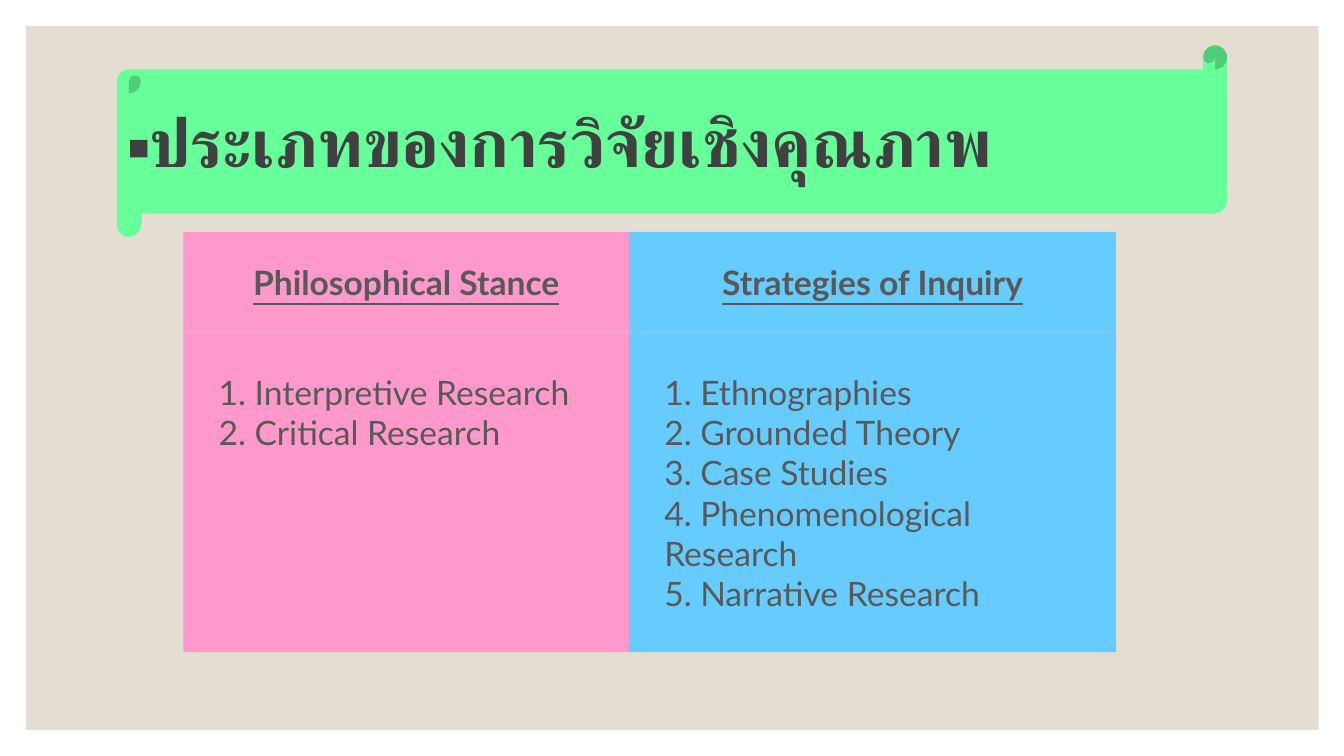
import pptx
import pptx.dml.color
import pptx.enum.shapes
import pptx.enum.text
import pptx.util

RGBColor = pptx.dml.color.RGBColor
Shape = pptx.enum.shapes.MSO_SHAPE
Anchor = pptx.enum.text.MSO_ANCHOR
Align = pptx.enum.text.PP_ALIGN

SAND = RGBColor(0xE3, 0xDE, 0xD1)
GREEN = RGBColor(0x66, 0xFF, 0x99)
PINK = RGBColor(0xFF, 0x99, 0xCC)
BLUE = RGBColor(0x66, 0xCC, 0xFF)
TITLE_GREY = RGBColor(0x40, 0x40, 0x40)
TEXT_GREY = RGBColor(0x59, 0x59, 0x59)
FONT = "Lato"
WIDTH = pptx.util.Inches(13.33)
HEIGHT = pptx.util.Inches(7.5)

HEADER_TOP, HEADER_HEIGHT = 30.67, 13.33
BODY_TOP, BODY_HEIGHT = HEADER_TOP + HEADER_HEIGHT, 42.27
SIDE_GAP = 1.88
COLUMNS = [
    (13.65, 33.16, PINK, "Philosophical Stance",
     ["1. Interpretive Research", "2. Critical Research"], 27.07),
    (46.81, 36.23, BLUE, "Strategies of Inquiry",
     ["1. Ethnographies", "2. Grounded Theory", "3. Case Studies",
      "4. Phenomenological", "Research", "5. Narrative Research"], 36.53),
]


def place(left, top, width, height):
    """Turn percentages of the slide's size into a position and a size."""
    return (int(WIDTH * left / 100), int(HEIGHT * top / 100),
            int(WIDTH * width / 100), int(HEIGHT * height / 100))


def add_block(slide, kind, color, *box):
    """Add a flat filled shape without outline or shadow."""
    shape = slide.shapes.add_shape(kind, *place(*box))
    shape.shadow.inherit = False
    shape.fill.solid()
    shape.fill.fore_color.rgb = color
    shape.line.fill.background()
    return shape


def write(shape, lines, size, color, align, anchor, bold=False, underline=False):
    """Fill a shape with one paragraph per line in a single style."""
    frame = shape.text_frame
    frame.text = "\n".join(lines)
    frame.word_wrap = True
    frame.vertical_anchor = anchor
    for paragraph in frame.paragraphs:
        paragraph.alignment = align
        for run in paragraph.runs:
            run.font.name = FONT
            run.font.size = pptx.util.Pt(size)
            run.font.bold = bold
            run.font.underline = underline
            run.font.color.rgb = color


def add_title(slide, text):
    """Set the title placeholder on top of a green scroll."""
    add_block(slide, Shape.HORIZONTAL_SCROLL, GREEN, 8.7, 6, 82.6, 25.33)
    title = slide.shapes.title
    title.left, title.top, title.width, title.height = place(8.78, 9.33, 82.52, 20)
    title.element.getparent().append(title.element)
    write(title, [text], 48, TITLE_GREY, Align.LEFT, Anchor.MIDDLE, bold=True)
    title.text_frame.paragraphs[0].line_spacing = 0.9


def add_column(slide, left, width, color, heading, items, list_height):
    """Add a coloured column with an underlined heading and a list."""
    inner_left, inner_width = left + SIDE_GAP, width - 2 * SIDE_GAP
    add_block(slide, Shape.RECTANGLE, color, left, HEADER_TOP, width, HEADER_HEIGHT)
    add_block(slide, Shape.RECTANGLE, color, left, BODY_TOP, width, BODY_HEIGHT)
    label = add_block(slide, Shape.RECTANGLE, color,
                      inner_left, HEADER_TOP + 1.6, inner_width, 10)
    write(label, [heading], 24, TEXT_GREY, Align.CENTER, Anchor.MIDDLE,
          bold=True, underline=True)
    listing = add_block(slide, Shape.RECTANGLE, color,
                        inner_left, BODY_TOP + 2.5, inner_width, list_height)
    listing.text_frame.margin_top = pptx.util.Inches(0.2)
    write(listing, items, 24, TEXT_GREY, Align.LEFT, Anchor.TOP)


def main():
    """Build the slide and save it."""
    presentation = pptx.Presentation()
    presentation.slide_width, presentation.slide_height = WIDTH, HEIGHT
    slide = presentation.slides.add_slide(presentation.slide_layouts[5])
    add_block(slide, Shape.RECTANGLE, SAND, 1.95, 3.47, 96.17, 93.07)
    add_title(slide, "▪ประเภทของการวิจัยเชิงคุณภาพ")
    for column in COLUMNS:
        add_column(slide, *column)
    presentation.save("out.pptx")


if __name__ == "__main__":
    main()
